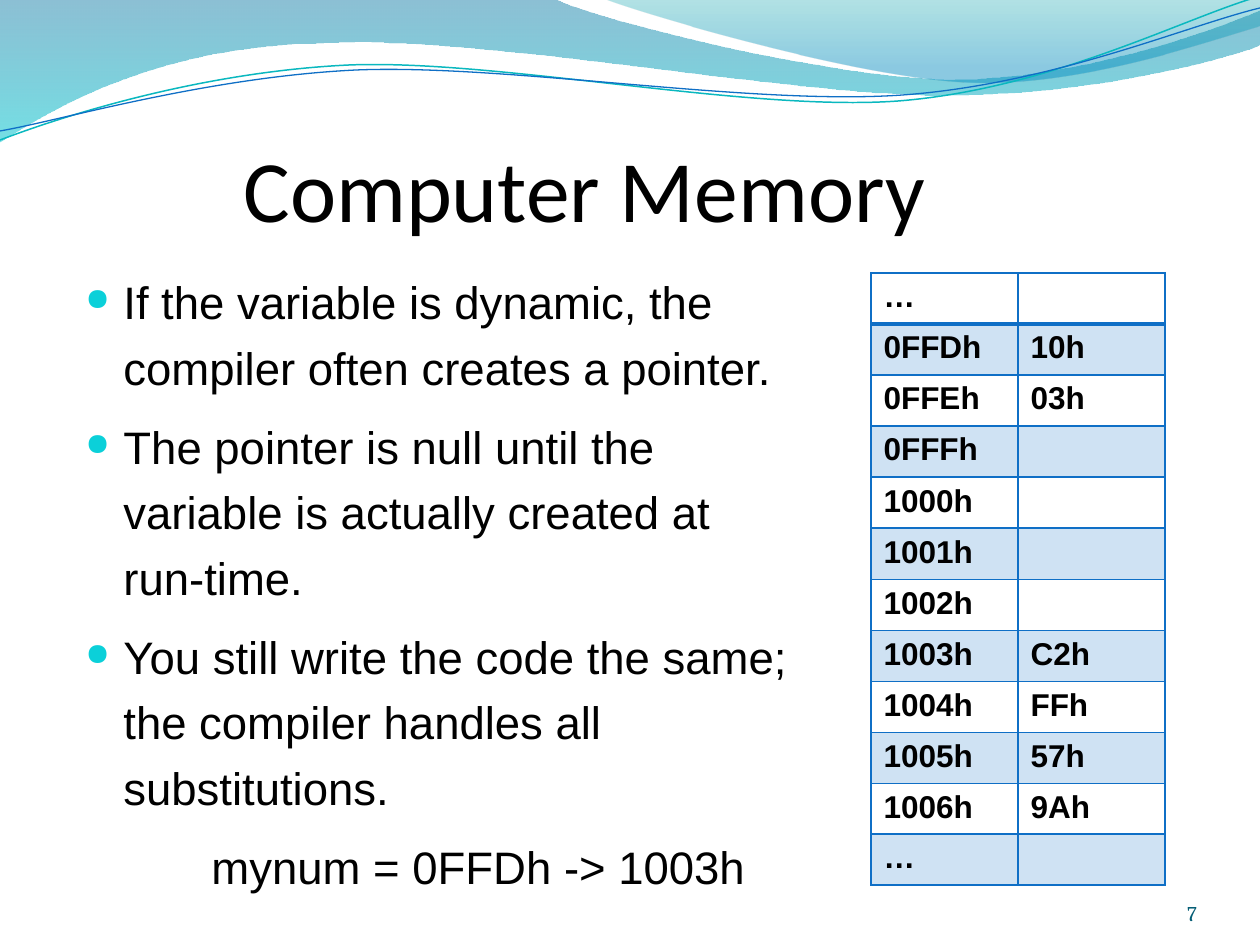
from lxml import etree
from pptx import Presentation
from pptx import util as u
from pptx.dml.color import RGBColor
from pptx.enum import text as t
from pptx.oxml import ns

PX = 914400 / 126
SLIDE_W, SLIDE_H = 1260, 945

BLACK = RGBColor(0x00, 0x00, 0x00)
BLUE = RGBColor(0x0F, 0x6F, 0xC6)
TEAL = RGBColor(0x0A, 0xB8, 0xBF)
BULLET = RGBColor(0x0B, 0xD0, 0xD9)
PAGE_NUMBER = RGBColor(0x04, 0x5D, 0x75)
DEEP_TOP, DEEP_BOTTOM = RGBColor(0x00, 0x74, 0xA1), RGBColor(0x00, 0xC6, 0xCF)
PALE_TOP, PALE_BOTTOM = RGBColor(0x00, 0xA1, 0xA9), RGBColor(0x00, 0x8B, 0xBF)

# A path is a start point, then tuples of one point (line) or three (Bezier curve).
DEEP_WAVE = [(0, 0), ((554, -1),),
             ((600, 21), (837, 79), (955, 79)), ((1075, 79), (1207, 33), (1260, 11)),
             ((1261, 45),), ((1239, 55), (1096, 96), (940, 95)),
             ((784, 95), (481, 35), (324, 43)), ((163, 45), (58, 105), (-1, 142))]
PALE_WAVE = [(604, -1), ((641, 14), (859, 78), (969, 82)),
             ((1079, 87), (1211, 40), (1260, 26)), ((1260, 0),)]
TEAL_CURVE = [(0, 140), ((60, 117), (199, 72), (349, 65)),
              ((498, 59), (747, 112), (898, 101)), ((1050, 89), (1182, 19), (1257, -3))]
BLUE_CURVE = [(0, 131), ((59, 121), (207, 77), (357, 70)),
              ((508, 64), (752, 106), (903, 95)), ((1053, 84), (1186, 26), (1260, 8))]

POINTS = [
    "If the variable is dynamic, the compiler often creates a pointer.",
    "The pointer is null until the variable is actually created at run-time.",
    "You still write the code the same; the compiler handles all substitutions.",
]
EXAMPLE = "\tmynum = 0FFDh -> 1003h"
MEMORY = [("…", ""), ("0FFDh", "10h"), ("0FFEh", "03h"), ("0FFFh", ""),
          ("1000h", ""), ("1001h", ""), ("1002h", ""), ("1003h", "C2h"),
          ("1004h", "FFh"), ("1005h", "57h"), ("1006h", "9Ah"), ("…", "")]
TIGHT_ROW = 10  # takes the height of its text


def px(length):
    return u.Emu(round(length * PX))


def sub(parent, tag, **attributes):
    return etree.SubElement(parent, ns.qn(tag), attributes)


def set_opacity(fill_xml, percents):
    for color, percent in zip(fill_xml.iter(ns.qn("a:srgbClr")), percents):
        sub(color, "a:alpha", val=str(percent * 1000))


def add_outline(slide, path, close):
    """Draw the path through its end points, then bend the curved segments."""
    start, *segments = path
    builder = slide.shapes.build_freeform(px(start[0]), px(start[1]), scale=1.0)
    builder.add_line_segments([(px(s[-1][0]), px(s[-1][1])) for s in segments], close=close)
    outline = builder.convert_to_shape()
    outline.shadow.inherit = False
    lines = list(outline._element.iter(ns.qn("a:lnTo")))
    for line, segment in zip(lines, segments):
        if len(segment) == 3:
            curve = etree.Element(ns.qn("a:cubicBezTo"))
            for x, y in segment:
                sub(curve, "a:pt", x=str(px(x) - outline.left), y=str(px(y) - outline.top))
            line.getparent().replace(line, curve)
    return outline


def add_wave(slide, path, stops):
    """Fill a wave downwards with stops of (position, colour, opacity percent)."""
    wave = add_outline(slide, path, close=True)
    wave.line.fill.background()
    wave.fill.gradient()
    wave.fill.gradient_angle = 270
    for stop, (position, color, _) in zip(wave.fill.gradient_stops, stops):
        stop.position = position
        stop.color.rgb = color
    set_opacity(wave._element.spPr, [opacity for _, _, opacity in stops])


def add_curve(slide, path, color, weight):
    curve = add_outline(slide, path, close=False)
    curve.fill.background()
    curve.line.color.rgb = color
    curve.line.width = u.Pt(weight)


def add_header(slide):
    add_wave(slide, DEEP_WAVE, [(0, DEEP_TOP, 45), (1, DEEP_BOTTOM, 55)])
    add_wave(slide, PALE_WAVE, [(0, PALE_TOP, 30), (0.8, PALE_BOTTOM, 45)])
    add_curve(slide, TEAL_CURVE, TEAL, 0.85)
    add_curve(slide, BLUE_CURVE, BLUE, 0.75)


def write(paragraph, words, size, font="Arial", color=BLACK, bold=False, align=None):
    run = paragraph.add_run()
    run.text = words
    run.font.size = u.Pt(size)
    run.font.name = font
    run.font.color.rgb = color
    run.font.bold = bold
    paragraph.alignment = align


def add_frame(slide, x, y, w, h):
    frame = slide.shapes.add_textbox(px(x), px(y), px(w), px(h)).text_frame
    frame.word_wrap = True
    return frame


def add_bullet(paragraph, indent):
    properties = paragraph._p.get_or_add_pPr()
    properties.set("marL", str(px(indent)))
    properties.set("indent", str(px(-indent)))
    sub(sub(properties, "a:buClr"), "a:srgbClr", val=str(BULLET))
    sub(properties, "a:buSzPct", val="68000")
    sub(properties, "a:buChar", char="●")


def add_tab_stop(paragraph, position):
    tabs = sub(paragraph._p.get_or_add_pPr(), "a:tabLst")
    sub(tabs, "a:tab", pos=str(px(position)), algn="l")


def add_title(slide, x, y, w, h):
    write(add_frame(slide, x, y, w, h).paragraphs[0], "Computer Memory", 50, font="Calibri")


def add_body(slide, x, y, w, h):
    frame = add_frame(slide, x, y, w, h)
    for index, words in enumerate([*POINTS, EXAMPLE]):
        paragraph = frame.add_paragraph() if index else frame.paragraphs[0]
        paragraph.line_spacing = 1.2
        paragraph.space_before = u.Pt(7.8)
        if words == EXAMPLE:
            add_tab_stop(paragraph, 126)
        else:
            add_bullet(paragraph, 38)
        write(paragraph, words, 26)


def add_page_number(slide, x, y, w, h):
    frame = add_frame(slide, x, y, w, h)
    frame.margin_left = frame.margin_right = frame.margin_top = frame.margin_bottom = 0
    frame.vertical_anchor = t.MSO_ANCHOR.BOTTOM
    write(frame.paragraphs[0], "7", 12, font="Cambria", color=PAGE_NUMBER,
          align=t.PP_ALIGN.RIGHT)


def format_cell(cell, row):
    """Border the cell, with a heavier rule under the first row, and tint odd rows."""
    properties = cell._tc.get_or_add_tcPr()
    for side in "LRTB":
        weight = 2 if row == 0 and side == "B" else 1
        border = sub(properties, f"a:ln{side}", w=str(u.Pt(weight)))
        sub(sub(border, "a:solidFill"), "a:srgbClr", val=str(BLUE))
    if row % 2:
        cell.fill.solid()
        cell.fill.fore_color.rgb = BLUE
        set_opacity(properties.find(ns.qn("a:solidFill")), [20])
    else:
        cell.fill.background()


def add_memory_table(slide, x, y, w, h):
    holder = slide.shapes.add_table(len(MEMORY), 2, px(x), px(y), px(w), px(h))
    memory = holder.table
    for column in memory.columns:
        column.width = px(w / 2)
    for row, values in enumerate(MEMORY):
        memory.rows[row].height = 0 if row == TIGHT_ROW else px(h / len(MEMORY))
        for column, value in enumerate(values):
            cell = memory.cell(row, column)
            format_cell(cell, row)
            if value:
                write(cell.text_frame.paragraphs[0], value, 18, bold=True)
    holder.height = px(h)


def main():
    deck = Presentation()
    deck.slide_width, deck.slide_height = px(SLIDE_W), px(SLIDE_H)
    slide = deck.slides.add_slide(deck.slide_layouts[6])
    add_header(slide)
    add_title(slide, 231, 129, 788, 76)
    add_body(slide, 73, 257, 735, 546)
    add_page_number(slide, 1092, 876, 105, 50)
    add_memory_table(slide, 871, 273, 294, 613)
    deck.save("out.pptx")


if __name__ == "__main__":
    main()
